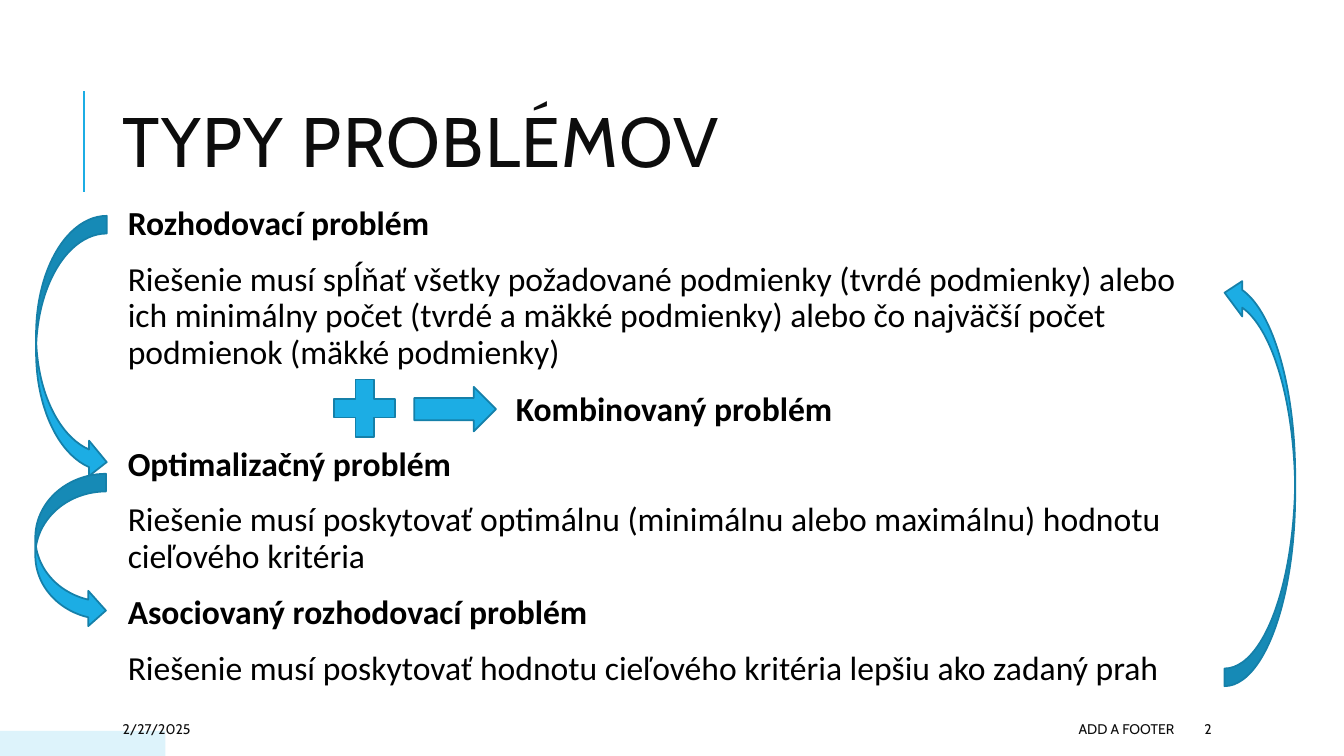
from lxml import etree
from pptx import Presentation
from pptx.dml.color import RGBColor
from pptx.enum.shapes import MSO_CONNECTOR, MSO_SHAPE
from pptx.enum.text import MSO_ANCHOR, MSO_AUTO_SIZE, PP_ALIGN
from pptx.oxml.ns import qn
from pptx.util import Cm, Pt

LEFT, RIGHT = PP_ALIGN.LEFT, PP_ALIGN.RIGHT
TOP, MIDDLE = MSO_ANCHOR.TOP, MSO_ANCHOR.MIDDLE
CURVED, PLUS, ARROW = (MSO_SHAPE.CURVED_RIGHT_ARROW, MSO_SHAPE.MATH_PLUS,
                       MSO_SHAPE.RIGHT_ARROW)
BLUE, DARK_BLUE, PALE_BLUE = "1CADE4", "1580A9", "DDF3FB"
INK, BLACK = "0D0D0D", "000000"

TITLE = "TYPY PROBLÉMOV"
PROBLEMS = [
    ("Rozhodovací problém",
     "Riešenie musí spĺňať všetky požadované podmienky (tvrdé podmienky) alebo "
     "ich minimálny počet (tvrdé a mäkké podmienky) alebo čo najväčší počet "
     "podmienok (mäkké podmienky)", 12),
    ("Optimalizačný problém",
     "Riešenie musí poskytovať optimálnu (minimálnu alebo maximálnu) hodnotu "
     "cieľového kritéria", 52),
    ("Asociovaný rozhodovací problém",
     "Riešenie musí poskytovať hodnotu cieľového kritéria lepšiu ako zadaný prah", 12),
]
COMBINED = "Kombinovaný problém"
FOOTERS = [
    ("2/27/2025", 2.84, 6, LEFT),
    ("ADD A FOOTER", 13.46, 16.38, RIGHT),
    ("2", 30.1, 2.69, LEFT),
]
SYMBOLS = [
    (CURVED, 0.91, 5.44, 1.78, 6.65, 0),
    (CURVED, 30.86, 6.93, 1.78, 10.36, 180),
    (PLUS, 8.15, 9.3, 2.08, 1.98, 0),
    (ARROW, 10.44, 9.75, 2.06, 1.12, 0),
    (CURVED, 0.89, 11.94, 1.78, 3.89, 0),
]


def colour(value):
    return RGBColor.from_string(value)


def place(item, left, top, width, height):
    item.left, item.top, item.width, item.height = map(Cm, (left, top, width, height))


def frame(item, anchor=TOP, inset=None):
    area = item.text_frame
    area.word_wrap = True
    area.auto_size = MSO_AUTO_SIZE.NONE
    area.vertical_anchor = anchor
    if inset is not None:
        area.margin_left = area.margin_right = Cm(inset)
        area.margin_top = area.margin_bottom = Cm(inset)
    return area


def write(paragraph, text, font="Calibri", size=24, ink=BLACK, bold=False, align=LEFT,
          line=0.9, before=0, after=0, indent=0, tracking=0):
    paragraph.alignment = align
    paragraph.line_spacing = line
    paragraph.space_before, paragraph.space_after = Pt(before), Pt(after)
    properties = paragraph._p.get_or_add_pPr()
    properties.set("marL", str(Cm(indent)))
    properties.set("indent", "0")
    etree.SubElement(properties, qn("a:buNone"))
    run = paragraph.add_run()
    run.text = text
    run.font.name, run.font.size, run.font.bold = font, Pt(size), bold
    run.font.color.rgb = colour(ink)
    if tracking:
        run._r.get_or_add_rPr().set("spc", str(tracking * 100))


def add_symbol(slide, kind, left, top, width, height, rotation=0,
               fill=BLUE, outline=DARK_BLUE):
    symbol = slide.shapes.add_shape(kind, *map(Cm, (left, top, width, height)))
    symbol.rotation = rotation
    symbol.shadow.inherit = False
    symbol.fill.solid()
    symbol.fill.fore_color.rgb = colour(fill)
    if outline:
        symbol.line.color.rgb = colour(outline)
        symbol.line.width = Pt(1.25)
    else:
        symbol.line.fill.background()


def add_label(slide, left, top, width, height, anchor=TOP, inset=None):
    label = slide.shapes.add_textbox(*map(Cm, (left, top, width, height)))
    return frame(label, anchor, inset).paragraphs[0]


def main():
    deck = Presentation()
    deck.slide_width, deck.slide_height = Cm(33.87), Cm(19.05)
    slide = deck.slides.add_slide(deck.slide_layouts[1])

    title = slide.shapes.title
    place(title, 2.84, 1.63, 27, 4.17)
    write(frame(title, MIDDLE).paragraphs[0], TITLE, font="Cabin", size=50, ink=INK,
          line=0.8, tracking=1)

    problems = slide.placeholders[1]
    place(problems, 2.84, 5.08, 27.79, 11.18)
    area = frame(problems, inset=0.13)
    lines = [entry for name, meaning, gap in PROBLEMS
             for entry in ((name, True, gap), (meaning, False, 12))]
    for index, (text, bold, gap) in enumerate(lines):
        paragraph = area.add_paragraph() if index else area.paragraphs[0]
        write(paragraph, text, bold=bold, before=gap, after=2, indent=0.25)

    accent = slide.shapes.add_connector(MSO_CONNECTOR.STRAIGHT,
                                        *map(Cm, (2.11, 4.83, 2.11, 2.29)))
    accent.line.color.rgb = colour(BLUE)
    accent.line.width = Pt(1.5)
    etree.SubElement(accent._element.spPr, qn("a:effectLst"))

    add_symbol(slide, MSO_SHAPE.RECTANGLE, 0, 18.42, 4.17, 0.63,
               fill=PALE_BLUE, outline=None)
    for text, left, width, align in FOOTERS:
        write(add_label(slide, left, 17.98, width, 0.76, MIDDLE), text,
              font="Cabin", size=10, ink=INK, align=align, line=1)

    for symbol in SYMBOLS:
        add_symbol(slide, *symbol)
    write(add_label(slide, 12.62, 9.75, 11.43, 1.65, inset=0.13), COMBINED,
          bold=True, before=6, after=2, indent=0.25)

    deck.save("out.pptx")


if __name__ == "__main__":
    main()
